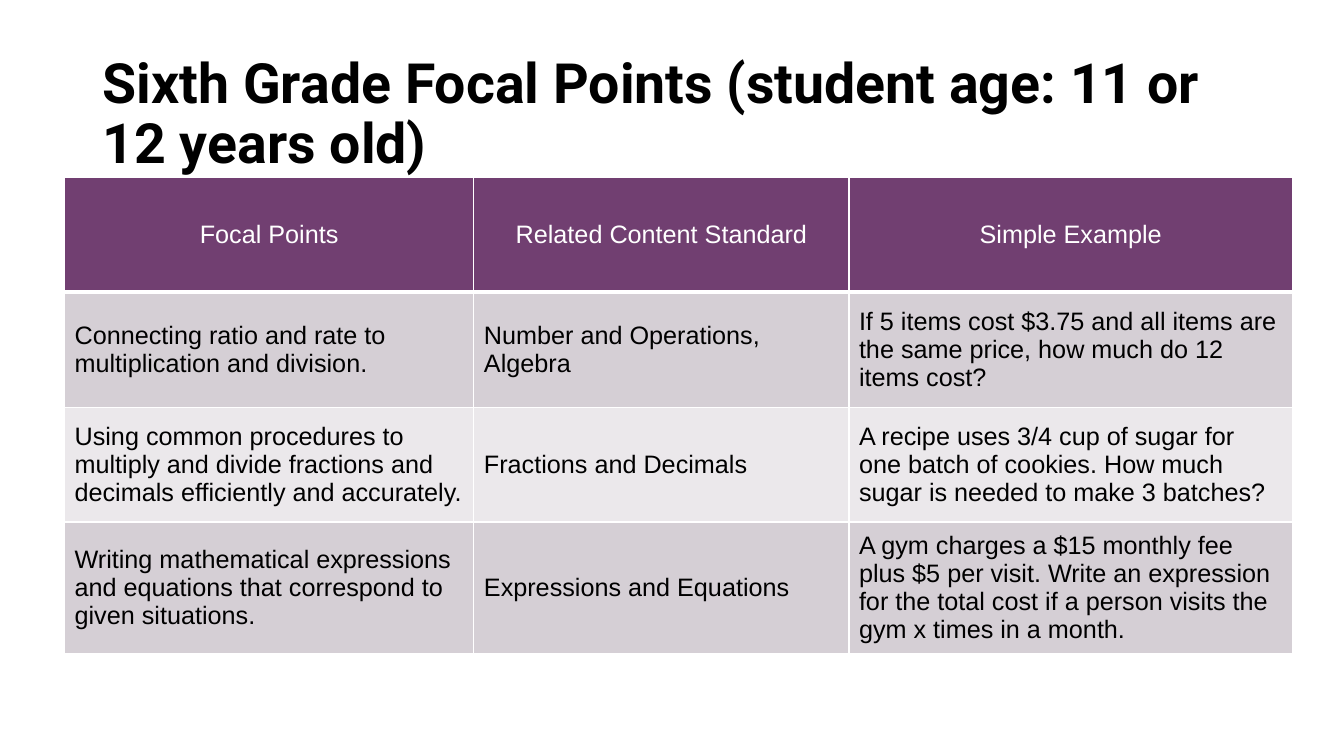
from lxml.etree import SubElement
from pptx import Presentation
from pptx.dml.color import RGBColor
from pptx.enum.text import MSO_ANCHOR, PP_ALIGN
from pptx.oxml.ns import qn
from pptx.util import Inches, Pt

BLACK = RGBColor(0x00, 0x00, 0x00)
WHITE = RGBColor(0xFF, 0xFF, 0xFF)
PLUM = RGBColor(0x71, 0x3F, 0x71)
MAUVE = RGBColor(0xD5, 0xCF, 0xD5)
PALE_MAUVE = RGBColor(0xEB, 0xE8, 0xEB)

TITLE = "Sixth Grade Focal Points (student age: 11 or 12 years old)"
COLUMN_WIDTHS = (4.06, 3.72, 4.4)
ROW_HEIGHT = 1.14
FOCAL_POINTS = (
    ("Focal Points", "Related Content Standard", "Simple Example"),
    (
        "Connecting ratio and rate to multiplication and division.",
        "Number and Operations, Algebra",
        "If 5 items cost $3.75 and all items are the same price, how much do 12 items cost?",
    ),
    (
        "Using common procedures to multiply and divide fractions and decimals "
        "efficiently and accurately.",
        "Fractions and Decimals",
        "A recipe uses 3/4 cup of sugar for one batch of cookies. How much sugar is "
        "needed to make 3 batches?",
    ),
    (
        "Writing mathematical expressions and equations that correspond to given situations.",
        "Expressions and Equations",
        "A gym charges a $15 monthly fee plus $5 per visit. Write an expression for the "
        "total cost if a person visits the gym x times in a month.",
    ),
)


def style_font(font, name, size, color, bold):
    """Apply typeface, size, colour and weight to a font."""
    font.name = name
    font.size = Pt(size)
    font.color.rgb = color
    font.bold = bold


def add_title(slide, text):
    """Add the bold slide title."""
    title = slide.shapes.add_textbox(Inches(0.92), Inches(0.66), Inches(11.5), Inches(0.97))
    frame = title.text_frame
    frame.word_wrap = True
    frame.vertical_anchor = MSO_ANCHOR.MIDDLE
    heading = frame.paragraphs[0]
    heading.text = text
    heading.line_spacing = 0.9
    style_font(heading.font, "Roboto", 39.6, BLACK, True)


def add_borders(cell, bottom_width):
    """Draw white borders around a table cell."""
    properties = cell._tc.get_or_add_tcPr()
    for side, width in (("L", 1), ("R", 1), ("T", 1), ("B", bottom_width)):
        border = SubElement(properties, qn(f"a:ln{side}"), w=str(Pt(width)))
        fill = SubElement(border, qn("a:solidFill"))
        SubElement(fill, qn("a:srgbClr"), val=str(WHITE))


def fill_cell(cell, text, is_header, background):
    """Write and format one table cell."""
    add_borders(cell, 3 if is_header else 1)
    cell.fill.solid()
    cell.fill.fore_color.rgb = background
    cell.vertical_anchor = MSO_ANCHOR.MIDDLE
    cell.text = text
    paragraph = cell.text_frame.paragraphs[0]
    paragraph.alignment = PP_ALIGN.CENTER if is_header else PP_ALIGN.LEFT
    style_font(paragraph.font, "Arial", 18, WHITE if is_header else BLACK, False)


def add_focal_table(slide, rows):
    """Add the focal point table with alternating row colours."""
    table = slide.shapes.add_table(
        len(rows), len(COLUMN_WIDTHS), Inches(0.64), Inches(1.76),
        Inches(sum(COLUMN_WIDTHS)), Inches(ROW_HEIGHT * len(rows)),
    ).table
    for column, width in zip(table.columns, COLUMN_WIDTHS):
        column.width = Inches(width)
    for row_index, texts in enumerate(rows):
        is_header = row_index == 0
        band = MAUVE if row_index % 2 else PALE_MAUVE
        for column_index, text in enumerate(texts):
            cell = table.cell(row_index, column_index)
            fill_cell(cell, text, is_header, PLUM if is_header else band)


def main():
    """Build and save the slide."""
    presentation = Presentation()
    presentation.slide_width = Inches(13.33)
    presentation.slide_height = Inches(7.5)
    slide = presentation.slides.add_slide(presentation.slide_layouts[6])
    add_title(slide, TITLE)
    add_focal_table(slide, FOCAL_POINTS)
    presentation.save("out.pptx")


if __name__ == "__main__":
    main()
